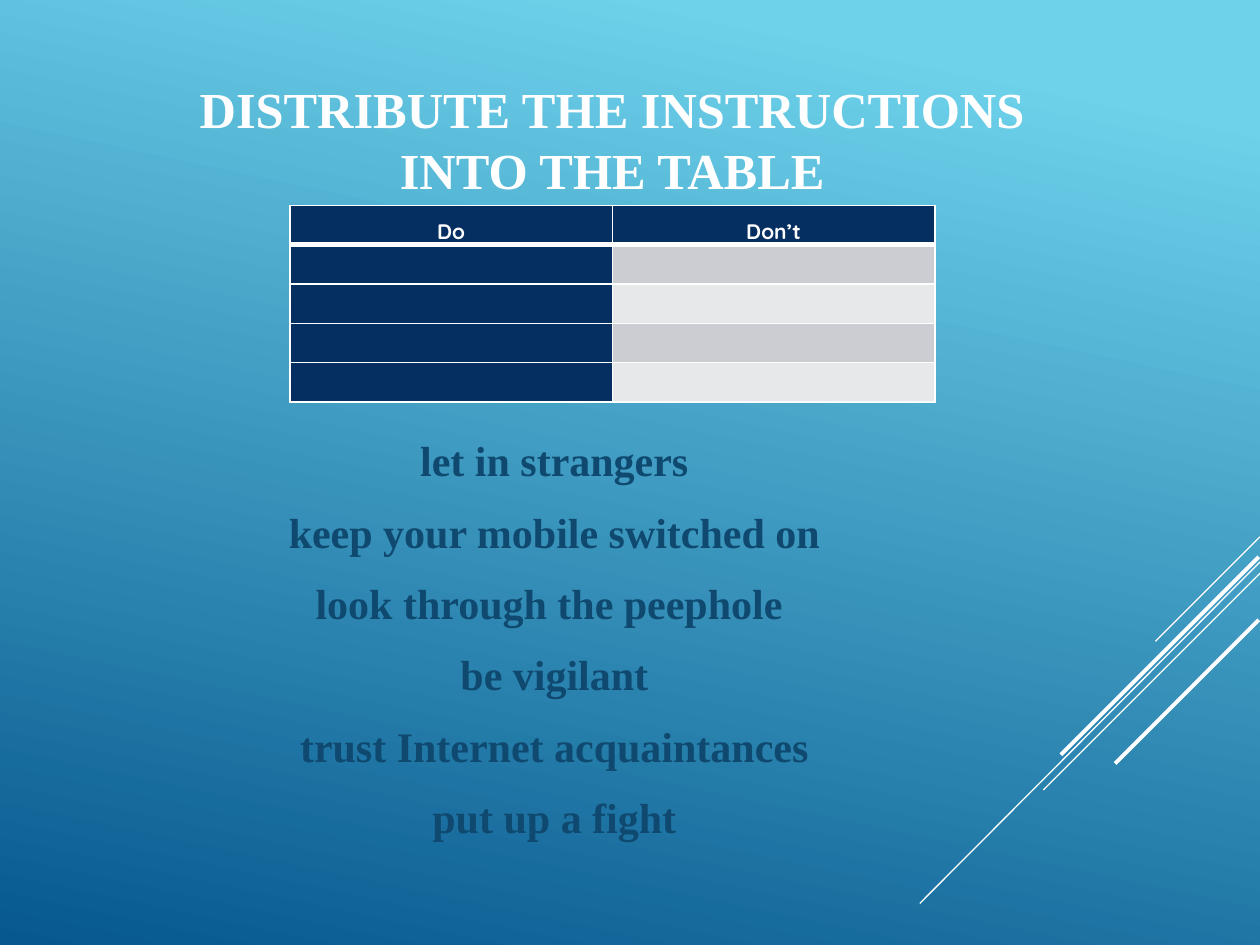
from dataclasses import dataclass

from lxml import etree
from pptx import Presentation
from pptx.dml.color import RGBColor
from pptx.enum.shapes import MSO_CONNECTOR
from pptx.enum.text import MSO_ANCHOR, PP_ALIGN
from pptx.oxml.ns import qn
from pptx.util import Inches, Pt

STRAIGHT = MSO_CONNECTOR.STRAIGHT
CENTER = PP_ALIGN.CENTER
TOP, BOTTOM = MSO_ANCHOR.TOP, MSO_ANCHOR.BOTTOM

WIDTH, HEIGHT = 10, 7.5
COLUMN_WIDTH, ROW_HEIGHT = 2.56, 0.3125
SERIF, SANS = "Times New Roman", "Quicksand"
COLORS = {
    "sky": "6ED2EB",
    "deep": "06588E",
    "white": "FFFFFF",
    "ink": "0F496F",
    "navy": "052F61",
    "band_dark": "CCCDD2",
    "band_light": "E7E8EA",
}


@dataclass
class Stripe:
    """Diagonal line; coordinates are in inches."""
    right: float
    top: float
    left: float
    bottom: float
    weight: float


@dataclass
class TextBlock:
    lines: list[str]
    left: float
    top: float
    width: float
    height: float
    size: float
    color: str
    anchor: MSO_ANCHOR
    spacing: float = 0


STRIPES = [
    Stripe(10, 4.26, 9.17, 5.09, 0.75),
    Stripe(10, 4.46, 7.3, 7.17, 0.75),
    Stripe(10, 4.55, 8.28, 6.27, 0.75),
    Stripe(9.99, 4.42, 8.42, 5.99, 2.25),
    Stripe(9.99, 4.92, 8.85, 6.06, 2.25),
]
HEADINGS = ["Do", "Don’t"]
ANSWER_ROWS = 4
TITLE = TextBlock(["DISTRIBUTE THE INSTRUCTIONS INTO THE TABLE"],
                  1.36, 0.37, 7, 1.26, 28.8, "white", BOTTOM)
INSTRUCTIONS = TextBlock(
    ["let in strangers", "keep your mobile switched on",
     "look through the peephole ", "be vigilant",
     "trust Internet acquaintances", "put up a fight"],
    0.9, 3.4, 7, 1.68, 24, "ink", TOP, 6)


def rgb(name: str) -> RGBColor:
    return RGBColor.from_string(COLORS[name])


def style_font(font, face: str, size: float, color: str) -> None:
    font.name, font.size, font.bold = face, Pt(size), True
    font.color.rgb = rgb(color)


def paint_background(slide) -> None:
    fill = slide.background.fill
    fill.gradient()
    fill.gradient_angle = 360 - 102
    for stop, position, color in zip(fill.gradient_stops, (0.1, 1), ("sky", "deep")):
        stop.position = position
        stop.color.rgb = rgb(color)


def draw_stripe(slide, stripe: Stripe) -> None:
    line = slide.shapes.add_connector(
        STRAIGHT, Inches(stripe.right), Inches(stripe.top),
        Inches(stripe.left), Inches(stripe.bottom))
    line.line.color.rgb = rgb("white")
    line.line.width = Pt(stripe.weight)
    etree.SubElement(line._element.spPr, qn("a:effectLst"))


def draw_text(slide, block: TextBlock) -> None:
    box = slide.shapes.add_textbox(Inches(block.left), Inches(block.top),
                                   Inches(block.width), Inches(block.height))
    frame = box.text_frame
    frame.word_wrap = True
    frame.vertical_anchor = block.anchor
    frame.text = "\n".join(block.lines)
    for paragraph in frame.paragraphs:
        paragraph.alignment = CENTER
        paragraph.space_before = paragraph.space_after = Pt(block.spacing)
        style_font(paragraph.font, SERIF, block.size, block.color)


def set_borders(cell, top: float, bottom: float) -> None:
    properties = cell._tc.get_or_add_tcPr()
    for side, weight in (("L", 1), ("R", 1), ("T", top), ("B", bottom)):
        border = etree.SubElement(properties, qn(f"a:ln{side}"), w=str(Pt(weight)))
        solid = etree.SubElement(border, qn("a:solidFill"))
        etree.SubElement(solid, qn("a:srgbClr"), val=COLORS["white"])


def cell_color(row: int, column: int) -> str:
    if row == 0 or column == 0:
        return "navy"
    return "band_dark" if row % 2 else "band_light"


def draw_table(slide, left: float, top: float) -> None:
    rows, columns = ANSWER_ROWS + 1, len(HEADINGS)
    table = slide.shapes.add_table(
        rows, columns, Inches(left), Inches(top),
        Inches(columns * COLUMN_WIDTH), Inches(rows * ROW_HEIGHT)).table
    for row in range(rows):
        for column in range(columns):
            cell = table.cell(row, column)
            cell.margin_left = cell.margin_right = Inches(0.07)
            cell.margin_top = cell.margin_bottom = 0
            set_borders(cell, 3 if row == 1 else 1, 3 if row == 0 else 1)
            cell.fill.solid()
            cell.fill.fore_color.rgb = rgb(cell_color(row, column))
            paragraph = cell.text_frame.paragraphs[0]
            style_font(paragraph.font, SANS, 12, "white")
            if row == 0:
                paragraph.text = HEADINGS[column]
                paragraph.alignment = CENTER
                paragraph.line_spacing = 1.5


def main() -> None:
    deck = Presentation()
    deck.slide_width, deck.slide_height = Inches(WIDTH), Inches(HEIGHT)
    slide = deck.slides.add_slide(deck.slide_layouts[6])

    # Backdrop
    paint_background(slide)
    for stripe in STRIPES:
        draw_stripe(slide, stripe)

    # Task and the instructions to sort
    draw_text(slide, TITLE)
    draw_text(slide, INSTRUCTIONS)

    # Answer table
    draw_table(slide, 2.3, 1.63)
    deck.save("out.pptx")


if __name__ == "__main__":
    main()
